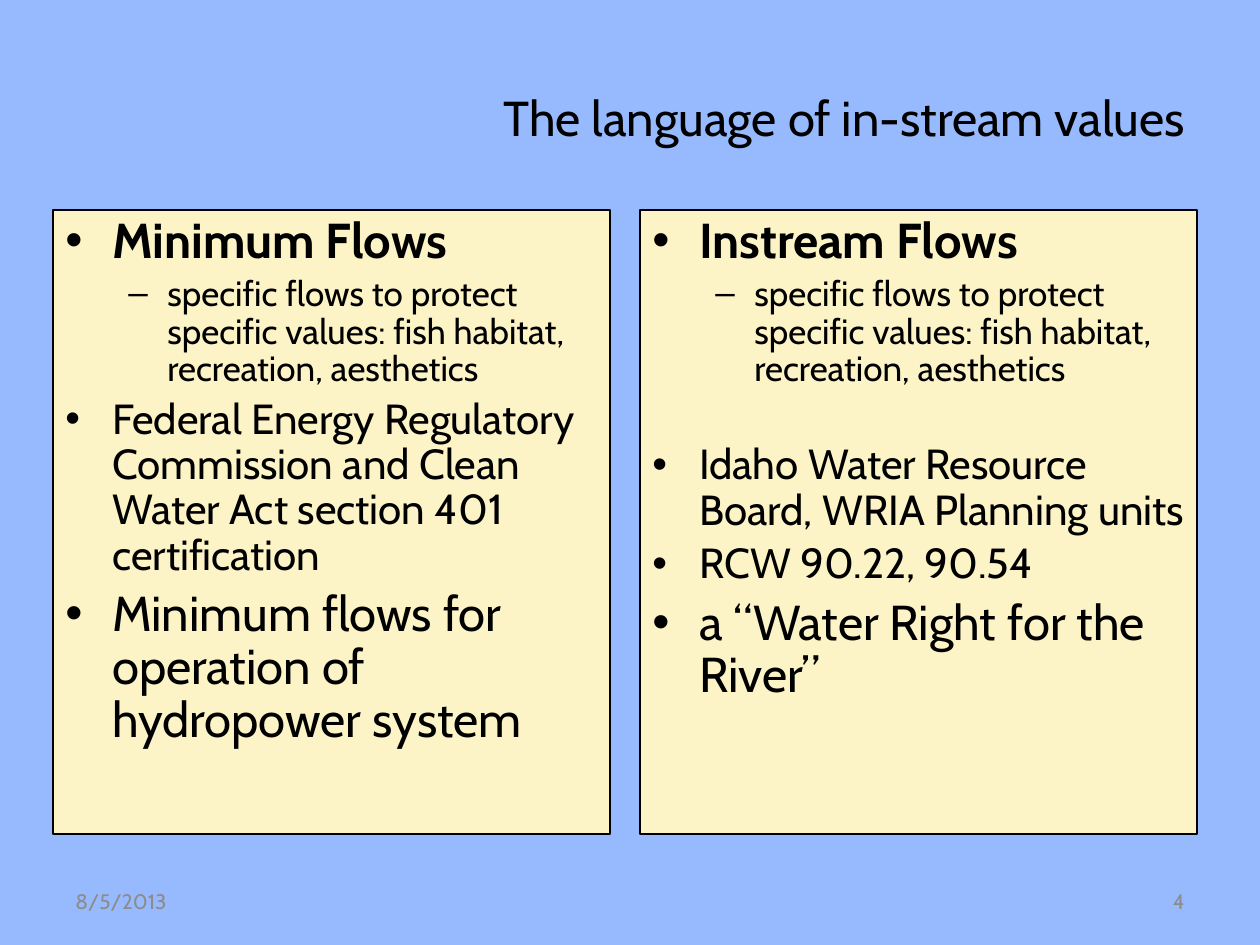
from dataclasses import dataclass

import pptx
import pptx.dml.color
import pptx.enum.shapes
import pptx.enum.text
import pptx.oxml.ns
import pptx.util
from lxml import etree

SCALE = 914400 // 126  # EMU in one px
FONT = "Cabin"
COLORS = {
    "back": "97BAFF",
    "card": "FCF4C6",
    "ink": "000000",
    "gray": "8C8C8C",
}
ALIGN = pptx.enum.text.PP_ALIGN
MIDDLE = pptx.enum.text.MSO_ANCHOR.MIDDLE


@dataclass(frozen=True)
class Box:
    left: int
    top: int
    width: int
    height: int


@dataclass(frozen=True)
class Item:
    text: str
    size: int
    level: int = 0
    bold: bool = False
    gap: int = 0  # points added above the usual spacing


@dataclass(frozen=True)
class Bullet:
    mark: str
    margin: int
    hang: int


@dataclass(frozen=True)
class Card:
    box: Box
    items: tuple[Item, ...]


BULLETS = (Bullet("•", 47, 47), Bullet("–", 102, 39))
VALUES = Item(
    "specific flows to protect specific values: fish habitat, recreation, aesthetics",
    20, level=1,
)
CARDS = (
    Card(Box(53, 210, 557, 624), (
        Item("Minimum Flows", 28, bold=True),
        VALUES,
        Item("Federal Energy Regulatory Commission and Clean Water Act section 401 certification", 24),
        Item("Minimum flows for operation of hydropower system", 28),
    )),
    Card(Box(640, 210, 557, 624), (
        Item("Instream Flows", 28, bold=True),
        VALUES,
        Item("Idaho Water Resource Board, WRIA Planning units", 24, gap=26),
        Item("RCW 90.22, 90.54", 24),
        Item("a “Water Right for the River”", 28),
    )),
)


def px(count: int) -> pptx.util.Emu:
    return pptx.util.Emu(count * SCALE)


def color(name: str) -> pptx.dml.color.RGBColor:
    return pptx.dml.color.RGBColor.from_string(COLORS[name])


def edges(box: Box) -> tuple[pptx.util.Emu, ...]:
    return px(box.left), px(box.top), px(box.width), px(box.height)


def add_run(para, text: str, size: int, ink: str = "ink", bold: bool = False) -> None:
    run = para.add_run()
    run.text = text
    font = run.font
    font.name = FONT
    font.size = pptx.util.Pt(size)
    font.bold = bold
    font.color.rgb = color(ink)


def set_bullet(para, bullet: Bullet) -> None:
    props = para._p.get_or_add_pPr()
    props.set("marL", str(px(bullet.margin)))
    props.set("indent", str(-px(bullet.hang)))
    tag = pptx.oxml.ns.qn
    etree.SubElement(props, tag("a:buFont"), typeface="Arial")
    etree.SubElement(props, tag("a:buChar"), char=bullet.mark)


def add_item(para, item: Item) -> None:
    para.alignment = ALIGN.LEFT
    para.level = item.level
    para.line_spacing = 0.9
    para.space_before = pptx.util.Pt(item.size * 0.2 + item.gap)
    set_bullet(para, BULLETS[item.level])
    add_run(para, item.text, item.size, bold=item.bold)


def add_card(slide, card: Card) -> None:
    kind = pptx.enum.shapes.MSO_SHAPE.RECTANGLE
    shape = slide.shapes.add_shape(kind, *edges(card.box))
    shape.shadow.inherit = False
    shape.fill.solid()
    shape.fill.fore_color.rgb = color("card")
    shape.line.color.rgb = color("ink")
    shape.line.width = pptx.util.Pt(1.5)
    frame = shape.text_frame
    frame.word_wrap = True
    frame.vertical_anchor = pptx.enum.text.MSO_ANCHOR.TOP
    for index, item in enumerate(card.items):
        para = frame.add_paragraph() if index else frame.paragraphs[0]
        add_item(para, item)


def set_line(frame, text: str, size: int, ink: str, align: ALIGN) -> None:
    """Fill a frame with one line, centred in height."""
    frame.word_wrap = True
    frame.vertical_anchor = MIDDLE
    para = frame.paragraphs[0]
    para.alignment = align
    add_run(para, text, size, ink)


def add_title(slide, text: str, box: Box) -> None:
    title = slide.shapes.title
    title.left, title.top, title.width, title.height = edges(box)
    set_line(title.text_frame, text, 28, "ink", ALIGN.RIGHT)


def add_foot(slide, text: str, left: int, align: ALIGN) -> None:
    box = slide.shapes.add_textbox(*edges(Box(left, 876, 294, 50)))
    set_line(box.text_frame, text, 12, "gray", align)


def main() -> None:
    deck = pptx.Presentation()
    deck.slide_width = pptx.util.Inches(10)
    deck.slide_height = pptx.util.Inches(7.5)
    slide = deck.slides.add_slide(deck.slide_layouts[5])
    slide.background.fill.solid()
    slide.background.fill.fore_color.rgb = color("back")

    add_title(slide, "The language of in-stream values", Box(63, 38, 1134, 158))
    for card in CARDS:
        add_card(slide, card)
    add_foot(slide, "8/5/2013", 63, ALIGN.LEFT)
    add_foot(slide, "4", 903, ALIGN.RIGHT)
    deck.save("out.pptx")


if __name__ == "__main__":
    main()
